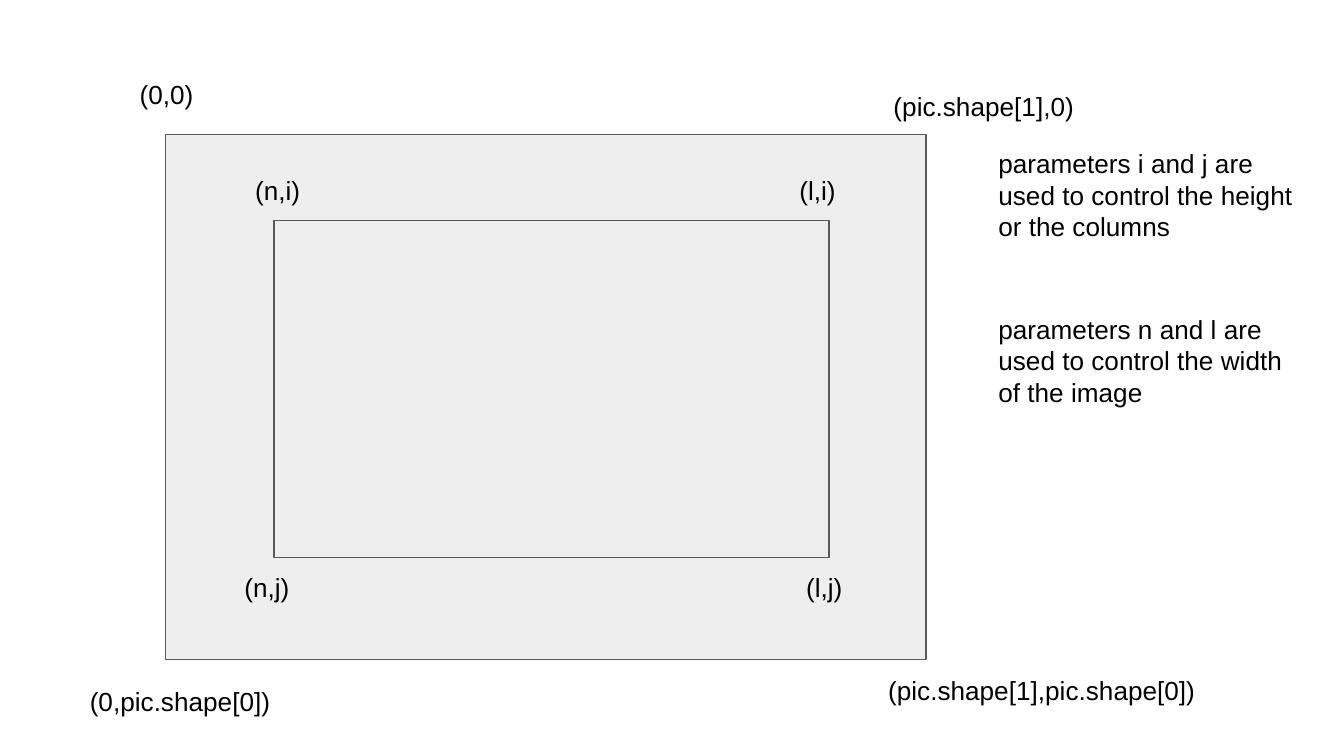
"""Build a slide showing the corner coordinates of a crop inside an image."""
from pptx import Presentation
from pptx.dml.color import RGBColor
from pptx.enum import shapes, text
from pptx.util import Inches, Pt


def set_color(target, value):
    target.rgb = RGBColor.from_string(value)


presentation = Presentation()
presentation.slide_width = Inches(10)
presentation.slide_height = Inches(10 * 9 / 16)
slide = presentation.slides.add_slide(presentation.slide_layouts[6])

image_frame = (1.23, 1, 5.66, 3.91)
crop_frame = (2.04, 1.64, 4.13, 2.51)
for frame in (image_frame, crop_frame):
    rectangle = slide.shapes.add_shape(
        shapes.MSO_SHAPE.RECTANGLE, *map(Inches, frame))
    rectangle.shadow.inherit = False
    rectangle.fill.solid()
    set_color(rectangle.fill.fore_color, "EEEEEE")
    set_color(rectangle.line.color, "595959")
    rectangle.line.width = Pt(0.75)

line_height, note_height = 0.44, 0.91
labels = [
    ("(0,0)", 0.94, 0.48, 0.78, line_height),
    ("parameters i and j are used to control the height or the columns",
     7.33, 1, 2.41, note_height),
    ("(pic.shape[1],0)", 6.55, 0.57, 1.66, line_height),
    ("(pic.shape[1],pic.shape[0])", 6.51, 4.92, 2.64, line_height),
    ("(0,pic.shape[0])", 0.57, 5, 2.64, line_height),
    ("(n,i)", 1.8, 1.2, 2.64, line_height),
    ("(n,j)", 1.72, 4.15, 2.64, line_height),
    ("(l,i)", 5.85, 1.2, 2.64, line_height),
    ("(l,j)", 5.9, 4.15, 2.64, line_height),
    ("parameters n and l are used to control the width of the image",
     7.33, 2.23, 2.41, note_height),
]
frame_format = {
    "word_wrap": True,
    "auto_size": text.MSO_AUTO_SIZE.SHAPE_TO_FIT_TEXT,
    "margin_left": Inches(0.1),
    "margin_top": Inches(0.1),
    "margin_right": Inches(0.1),
    "margin_bottom": Inches(0.1),
}
font_format = {"name": "Arial", "size": Pt(14)}

for wording, *position in labels:
    label = slide.shapes.add_textbox(*map(Inches, position))
    for name, value in frame_format.items():
        setattr(label.text_frame, name, value)
    run = label.text_frame.paragraphs[0].add_run()
    run.text = wording
    for name, value in font_format.items():
        setattr(run.font, name, value)
    set_color(run.font.color, "000000")

presentation.save("out.pptx")
